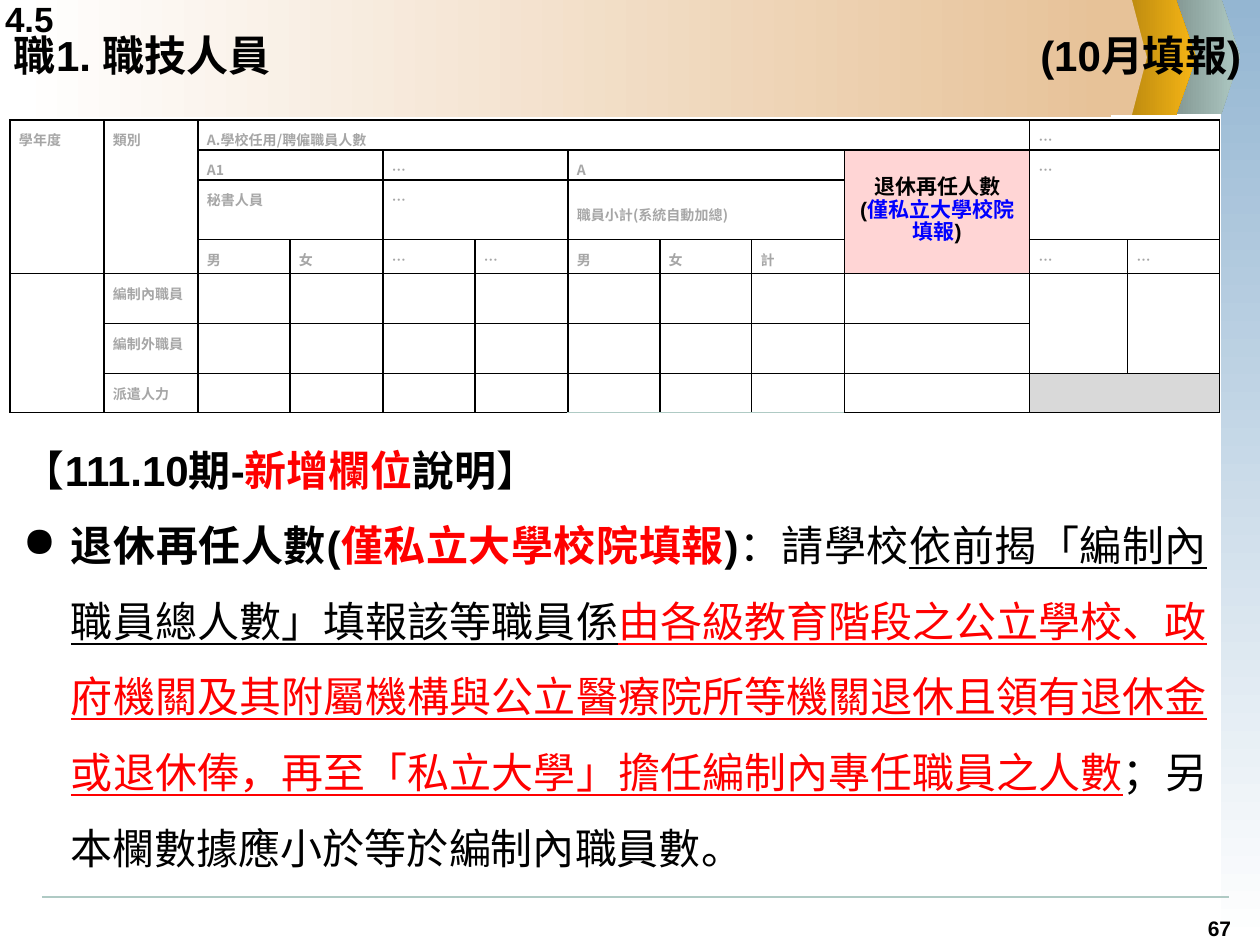
from lxml.etree import SubElement
from pptx import Presentation
from pptx.dml.color import RGBColor
from pptx.enum.shapes import MSO_CONNECTOR as Connector, MSO_SHAPE as Shape
from pptx.enum.text import MSO_ANCHOR as Anchor, PP_ALIGN as Align
from pptx.oxml.ns import qn
from pptx.util import Pt

PX = 914400 // 126
BLACK = RGBColor(0, 0, 0)
WHITE = RGBColor(255, 255, 255)
RED = RGBColor(255, 0, 0)
BLUE = RGBColor(0, 0, 255)
GRAY = RGBColor(0xA6, 0xA6, 0xA6)
SILVER = RGBColor(0xD9, 0xD9, 0xD9)
PINK = RGBColor(0xFF, 0xD5, 0xD5)
SKY = RGBColor(0x94, 0xB6, 0xD2)
MINT = RGBColor(0xAF, 0xCA, 0xC4)
SLATE = RGBColor(0x7D, 0x90, 0x8C)
OCHRE = RGBColor(0xB1, 0x82, 0x0F)
GOLD = RGBColor(0xF7, 0xB6, 0x15)
SAND = RGBColor(0xE7, 0xC2, 0x98)

COLUMNS = [94, 94, 92, 93, 92, 93, 92, 92, 93, 185, 98, 92]
ROWS = [30, 29, 60, 34, 50, 50, 39]
MERGES = [
    (0, 0, 3, 0), (0, 1, 3, 1), (0, 2, 0, 9), (0, 10, 0, 11),
    (1, 2, 1, 3), (1, 4, 1, 5), (1, 6, 1, 8), (1, 9, 3, 9), (1, 10, 2, 11),
    (2, 2, 2, 3), (2, 4, 2, 5), (2, 6, 2, 8),
    (4, 0, 6, 0), (4, 10, 5, 10), (4, 11, 5, 11), (6, 10, 6, 11),
]
LABELS = {
    (0, 0): "學年度", (0, 1): "類別", (0, 2): "A.學校任用/聘僱職員人數", (0, 10): "…",
    (1, 2): "A1", (1, 4): "…", (1, 6): "A", (1, 10): "…",
    (2, 2): "秘書人員", (2, 4): "…", (2, 6): "職員小計(系統自動加總)",
    (3, 2): "男", (3, 3): "女", (3, 4): "…", (3, 5): "…", (3, 6): "男",
    (3, 7): "女", (3, 8): "計", (3, 10): "…", (3, 11): "…",
    (4, 1): "編制內職員", (5, 1): "編制外職員", (6, 1): "派遣人力",
}


def px(*lengths):
    return [length * PX for length in lengths]


def write(para, text, size=24, color=BLACK, bold=True, underline=False, font="Arial"):
    span = para.add_run()
    span.text = text
    span.font.size = Pt(size)
    span.font.name = font
    span.font.bold = bold
    span.font.underline = underline
    span.font.color.rgb = color


def hang(para, indent, bullet=None):
    settings = para._p.get_or_add_pPr()
    settings.set("marL", str(indent * PX))
    settings.set("indent", str(-indent * PX))
    if bullet:
        SubElement(settings, qn("a:buChar")).set("char", bullet)


def add_box(page, *place):
    frame = page.shapes.add_textbox(*px(*place)).text_frame
    frame.word_wrap = True
    frame.margin_left = frame.margin_right = 13 * PX
    frame.margin_top = frame.margin_bottom = 6 * PX
    return frame


def add_label(page, place, text, align=Align.LEFT, size=24):
    para = add_box(page, *place).paragraphs[0]
    para.alignment = align
    write(para, text, size)


def add_block(page, kind, place, start, end, angle=0):
    shape = page.shapes.add_shape(kind, *px(*place))
    shape.shadow.inherit = False
    shape.line.fill.background()
    if kind == Shape.PENTAGON:
        shape.adjustments[0] = 0.25
    if start == end:
        shape.fill.solid()
        shape.fill.fore_color.rgb = start
        return
    shape.fill.gradient()
    shape.fill.gradient_angle = angle
    for stop, color in zip(shape.fill.gradient_stops, (start, end)):
        stop.color.rgb = color


def add_rule(page, *ends):
    rule = page.shapes.add_connector(Connector.STRAIGHT, *px(*ends))
    rule.line.color.rgb = MINT
    rule.line.width = Pt(0.75)
    SubElement(rule._element.spPr, qn("a:effectLst"))


def add_background(page):
    add_block(page, Shape.RECTANGLE, (1221, 0, 39, 945), SKY, WHITE, 270)
    add_rule(page, 42, 897, 1229, 897)
    add_block(page, Shape.PENTAGON, (1165, -1, 75, 115), SLATE, MINT)
    add_block(page, Shape.PENTAGON, (1116, 0, 80, 115), OCHRE, GOLD)
    add_block(page, Shape.RECTANGLE, (15, 0, 1096, 117), WHITE, SAND)
    add_block(page, Shape.PENTAGON, (1087, 0, 60, 115), SAND, SAND)


def draw_borders(cell, bottom):
    settings = cell._tc.get_or_add_tcPr()
    sides = {"a:lnL": BLACK, "a:lnR": BLACK, "a:lnT": BLACK, "a:lnB": bottom}
    for tag, color in sides.items():
        line = SubElement(settings, qn(tag), w=str(Pt(1)))
        fill = SubElement(line, qn("a:solidFill"))
        SubElement(fill, qn("a:srgbClr"), val=str(color))


def fill_cell(cell, color=None):
    if color is None:
        cell.fill.background()
    else:
        cell.fill.solid()
        cell.fill.fore_color.rgb = color


def write_new_field(cell):
    cell.vertical_anchor = Anchor.MIDDLE
    frame = cell.text_frame
    heading, note = frame.paragraphs[0], frame.add_paragraph()
    for para in (heading, note):
        para.alignment = Align.CENTER
        para.line_spacing = Pt(13)
    write(heading, "退休再任人數", 12)
    write(note, "(", 12)
    write(note, "僅私立大學校院填報", 12, BLUE)
    write(note, ")", 12)


def add_staff_table(page):
    place = px(10, 120, sum(COLUMNS), sum(ROWS))
    table = page.shapes.add_table(len(ROWS), len(COLUMNS), *place).table
    table.first_row = table.horz_banding = False
    for column, width in zip(table.columns, COLUMNS):
        column.width = width * PX
    for row, height in zip(table.rows, ROWS):
        row.height = height * PX
    fills = {(1, 9): PINK, (6, 10): SILVER}
    for r in range(len(ROWS)):
        for c in range(len(COLUMNS)):
            cell = table.cell(r, c)
            cell.margin_left = cell.margin_right = 9 * PX
            cell.margin_top = cell.margin_bottom = 0
            draw_borders(cell, MINT if r == 6 and 6 <= c <= 8 else BLACK)
            fill_cell(cell, fills.get((r, c)))
            para = cell.text_frame.paragraphs[0]
            para.line_spacing = Pt(17)
            if (r, c) in LABELS:
                hang(para, 21)
                write(para, LABELS[r, c], 8, GRAY, font="Noto Sans CJK SC")
    for top, left, bottom, right in MERGES:
        table.cell(top, left).merge(table.cell(bottom, right))
    for r in (1, 2):
        table.cell(r, 6).vertical_anchor = Anchor.MIDDLE
    write_new_field(table.cell(1, 9))


def add_explanation(page):
    frame = add_box(page, 10, 413, 1210, 471)
    heading, item = frame.paragraphs[0], frame.add_paragraph()
    for para in (heading, item):
        para.alignment = Align.JUSTIFY
        para.line_spacing = 1.5
    write(heading, "【", bold=False)
    write(heading, "111.10期-")
    write(heading, "新增欄位", color=RED)
    write(heading, "說明")
    write(heading, "】", bold=False)
    hang(item, 48, "●")
    write(item, "退休再任人數(")
    write(item, "僅私立大學校院填報", color=RED)
    write(item, ")")
    write(item, "：請學校", bold=False)
    write(item, "依前揭「編制內職員總人數」填報該等職員係", bold=False, underline=True)
    write(item, "由各級教育階段之公立學校、政府機關及其附屬機構與公立醫療院所等機關退休且領有退休金或退休俸，"
          "再至「私立大學」擔任編制內專任職員之人數", color=RED, bold=False, underline=True)
    write(item, "；另本欄數據應小於等於編制內職員數。", bold=False)


def main():
    deck = Presentation()
    deck.slide_width, deck.slide_height = px(1260, 945)
    page = deck.slides.add_slide(deck.slide_layouts[6])
    add_background(page)
    add_label(page, (1179, 910, 81, 35), "67", Align.CENTER, 12)
    add_label(page, (1, 23, 600, 84), "職1. 職技人員")
    add_label(page, (854, 23, 400, 84), "(10月填報)", Align.RIGHT)
    add_label(page, (-8, -9, 122, 55), "4.5", size=20)
    add_staff_table(page)
    add_explanation(page)
    deck.save("out.pptx")


if __name__ == "__main__":
    main()
